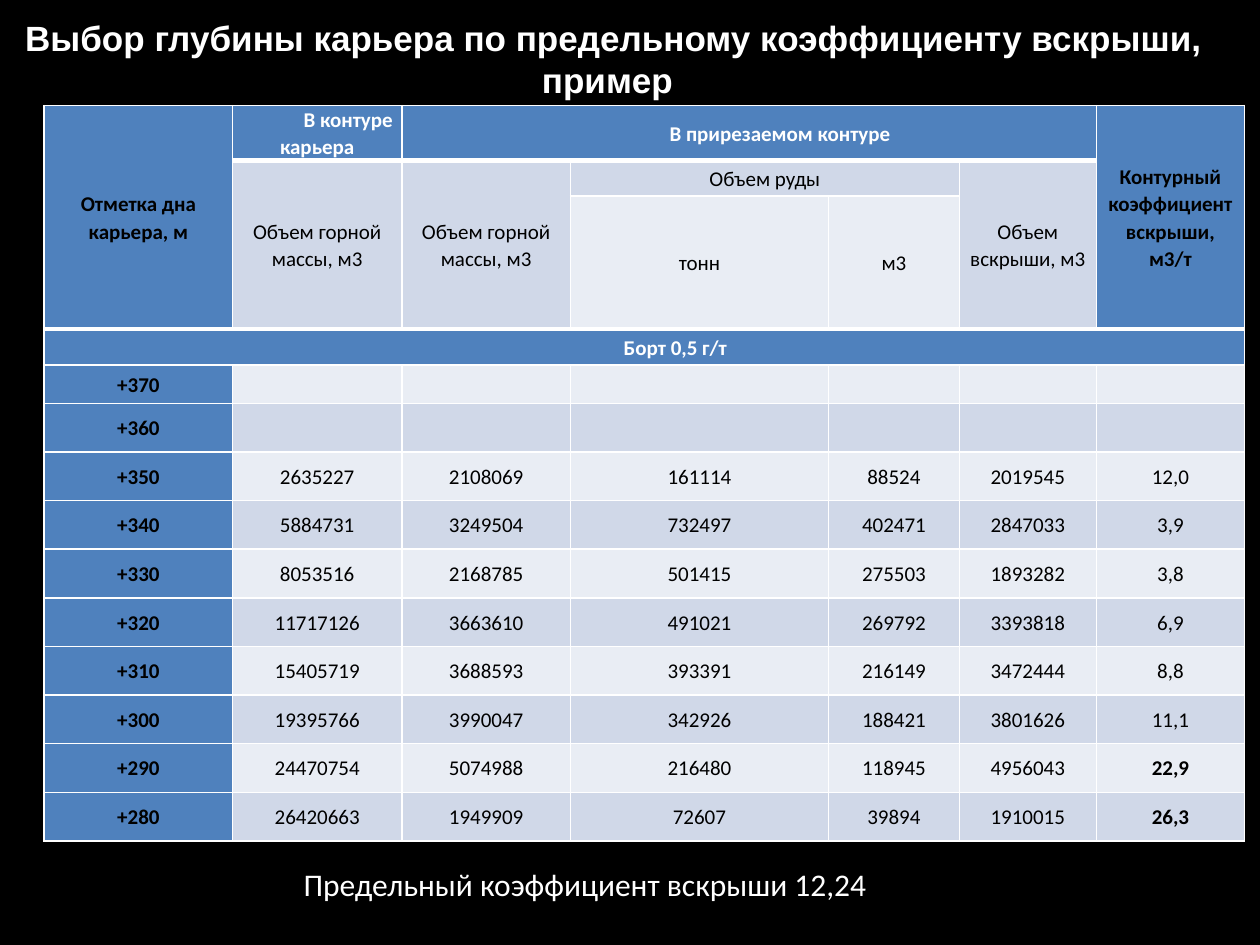
"""Slide with a table for choosing the depth of an open pit."""
import lxml.etree
import pptx
import pptx.dml.color
import pptx.enum.text
import pptx.oxml.ns
import pptx.util

Cm = pptx.util.Cm
Pt = pptx.util.Pt

BLUE, MID, PALE = "4F81BD", "D0D8E8", "E9EDF4"
WHITE, BLACK = "FFFFFF", "000000"
TITLE = "Выбор глубины карьера по предельному коэффициенту вскрыши, пример "
NOTE = "Предельный коэффициент вскрыши 12,24"
MASS = "Объем горной массы, м3"

WIDTHS = [3.8, 3.41, 3.4, 5.2, 2.64, 2.76, 2.99]
HEIGHTS = [1.09, 0.72, 2.68, 0.72, 0.77] + [0.98] * 9

DARK = dict(color=BLACK, bold=True)
LIGHT = dict(color=WHITE, bold=True, indent=1.25)
PLAIN = dict(color=BLACK, bold=False)

HEADS = [
    (0, 0, 3, 1, "Отметка дна карьера, м", BLUE, DARK),
    (0, 1, 1, 1, "В контуре карьера", BLUE, LIGHT),
    (0, 2, 1, 4, "В прирезаемом контуре", BLUE, LIGHT),
    (0, 6, 3, 1, "Контурный коэффициент вскрыши, м3/т", BLUE, DARK),
    (1, 1, 2, 1, MASS, MID, PLAIN),
    (1, 2, 2, 1, MASS, MID, PLAIN),
    (1, 3, 1, 2, "Объем руды", MID, PLAIN),
    (1, 5, 2, 1, "Объем вскрыши, м3", MID, PLAIN),
    (2, 3, 1, 1, "тонн", PALE, PLAIN),
    (2, 4, 1, 1, "м3", PALE, PLAIN),
    (3, 0, 1, 7, "Борт 0,5 г/т", BLUE, LIGHT),
]
BODY = [
    ("+370", "", "", "", "", "", ""),
    ("+360", "", "", "", "", "", ""),
    ("+350", "2635227", "2108069", "161114", "88524", "2019545", "12,0"),
    ("+340", "5884731", "3249504", "732497", "402471", "2847033", "3,9"),
    ("+330", "8053516", "2168785", "501415", "275503", "1893282", "3,8"),
    ("+320", "11717126", "3663610", "491021", "269792", "3393818", "6,9"),
    ("+310", "15405719", "3688593", "393391", "216149", "3472444", "8,8"),
    ("+300", "19395766", "3990047", "342926", "188421", "3801626", "11,1"),
    ("+290", "24470754", "5074988", "216480", "118945", "4956043", "22,9"),
    ("+280", "26420663", "1949909", "72607", "39894", "1910015", "26,3"),
]
STRONG = {"22,9", "26,3"}


def paint(fill, color):
    fill.solid()
    fill.fore_color.rgb = pptx.dml.color.RGBColor.from_string(color)


def put(frame, text, size=12, font="Calibri", color=BLACK, bold=False,
        center=True, indent=0, space=None):
    para = frame.paragraphs[0]
    if center:
        para.alignment = pptx.enum.text.PP_ALIGN.CENTER
    if space:
        para.line_spacing = space
    if indent:
        props = para._p.get_or_add_pPr()
        props.set("marL", "0")
        props.set("indent", str(int(Cm(indent))))
    run = para.add_run()
    run.text = text
    run.font.size = Pt(size)
    run.font.name = font
    run.font.bold = bold
    paint(run.font.fill, color)


def edge(cell, low):
    props = cell._tc.get_or_add_tcPr()
    name = pptx.oxml.ns.qn
    for side, width in zip("LRTB", (1, 1, 1, low)):
        line = lxml.etree.SubElement(props, name("a:ln" + side), w=str(Pt(width)))
        solid = lxml.etree.SubElement(line, name("a:solidFill"))
        lxml.etree.SubElement(solid, name("a:srgbClr"), val=WHITE)


def fill_cell(cell, text, color, form):
    paint(cell.fill, color)
    if text:
        put(cell.text_frame, text, space=1.07, **form)


def add_grid(slide):
    shape = slide.shapes.add_table(
        len(HEIGHTS), len(WIDTHS), Cm(0.89), Cm(2.13),
        Cm(sum(WIDTHS)), Cm(sum(HEIGHTS)))
    table = shape.table
    table.first_row = table.horz_banding = False
    for col, width in zip(table.columns, WIDTHS):
        col.width = Cm(width)
    for num, (row, height) in enumerate(zip(table.rows, HEIGHTS)):
        row.height = Cm(height)
        for cell in row.cells:
            cell.margin_left = cell.margin_right = Cm(0.15)
            cell.margin_top = cell.margin_bottom = 0
            cell.vertical_anchor = pptx.enum.text.MSO_ANCHOR.MIDDLE
            edge(cell, 1 if num else 3)
    for row, col, down, wide, text, color, form in HEADS:
        cell = table.cell(row, col)
        if down * wide > 1:
            cell.merge(table.cell(row + down - 1, col + wide - 1))
        fill_cell(cell, text, color, form)
    for num, line in enumerate(BODY):
        for col, text in enumerate(line):
            color = (PALE, MID)[num % 2] if col else BLUE
            form = DARK if col == 0 or text in STRONG else PLAIN
            fill_cell(table.cell(num + 4, col), text, color, form)


def add_label(slide, text, left, top, width, height, wrap, **form):
    box = slide.shapes.add_textbox(Cm(left), Cm(top), Cm(width), Cm(height))
    box.text_frame.word_wrap = wrap
    box.text_frame.auto_size = pptx.enum.text.MSO_AUTO_SIZE.SHAPE_TO_FIT_TEXT
    put(box.text_frame, text, color=WHITE, **form)


def main():
    deck = pptx.Presentation()
    deck.slide_width, deck.slide_height = Cm(25.4), Cm(19.05)
    slide = deck.slides.add_slide(deck.slide_layouts[6])
    paint(slide.background.fill, BLACK)
    add_grid(slide)
    add_label(slide, NOTE, 5.87, 17.32, 12.29, 1.02, False, size=18, center=False)
    add_label(slide, TITLE, 0, 0.2, 24.69, 1.96, True, size=20, font="Arial",
              bold=True, indent=0.05)
    deck.save("out.pptx")


if __name__ == "__main__":
    main()
